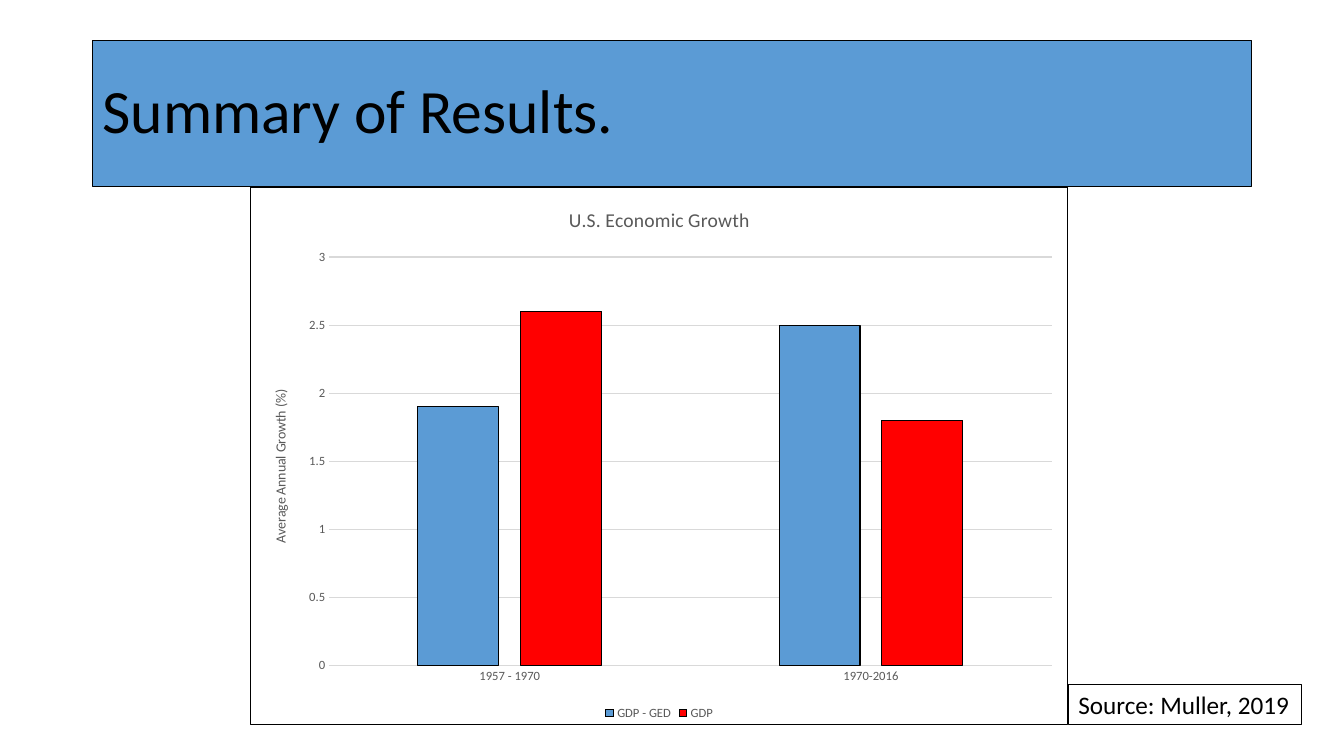
import pptx
import pptx.chart.data
import pptx.dml.color
import pptx.enum.chart
import pptx.enum.text
import pptx.oxml
import pptx.util

COLORS = {"blue": "5B9BD5", "red": "FF0000", "black": "000000",
          "white": "FFFFFF", "gray": "595959", "grid": "D9D9D9"}
FONT = "Calibri"
COLUMNS, ROWS = 160, 90
CELL = pptx.util.Inches(1) / 12


def rgb(name):
    return pptx.dml.color.RGBColor.from_string(COLORS[name])


def style_font(font, size, color):
    font.name = FONT
    font.size = pptx.util.Pt(size)
    font.bold = False
    font.color.rgb = rgb(color)


def style_line(line, color="black"):
    line.color.rgb = rgb(color)
    line.width = pptx.util.Pt(0.75)


def write(frame, text, size, color="black", align=None, spacing=None):
    paragraph = frame.paragraphs[0]
    paragraph.alignment = align
    paragraph.line_spacing = spacing
    run = paragraph.add_run()
    run.text = text
    style_font(run.font, size, color)


class ResultsSlide:
    def __init__(self, deck):
        self.slide = deck.slides.add_slide(deck.slide_layouts[5])

    def cells(self, *lengths):
        return [round(length * CELL) for length in lengths]

    def title(self, text, box):
        heading = self.slide.shapes.title
        heading.left, heading.top, heading.width, heading.height = self.cells(*box)
        heading.fill.solid()
        heading.fill.fore_color.rgb = rgb("blue")
        style_line(heading.line)
        frame = heading.text_frame
        frame.auto_size = pptx.enum.text.MSO_AUTO_SIZE.NONE
        frame.vertical_anchor = pptx.enum.text.MSO_ANCHOR.MIDDLE
        write(frame, text, 44, align=pptx.enum.text.PP_ALIGN.LEFT, spacing=0.9)

    def caption(self, text, box):
        source = self.slide.shapes.add_textbox(*self.cells(*box))
        style_line(source.line)
        source.text_frame.word_wrap = False
        source.text_frame.auto_size = pptx.enum.text.MSO_AUTO_SIZE.SHAPE_TO_FIT_TEXT
        write(source.text_frame, text, 18)

    def column_chart(self, heading, value_heading, periods, series, box):
        """Series maps each name to its values and its colour."""
        growth_data = pptx.chart.data.CategoryChartData()
        growth_data.categories = periods
        for name, (values, _) in series.items():
            growth_data.add_series(name, values)
        chart = self.slide.shapes.add_chart(
            pptx.enum.chart.XL_CHART_TYPE.COLUMN_CLUSTERED,
            *self.cells(*box), growth_data).chart
        style_font(chart.font, 10, "black")
        self.frame_chart(chart)
        write(chart.chart_title.text_frame, heading, 14, "gray")
        chart.chart_title.include_in_layout = False

        chart.has_legend = True
        chart.legend.position = pptx.enum.chart.XL_LEGEND_POSITION.BOTTOM
        chart.legend.include_in_layout = False
        style_font(chart.legend.font, 9, "gray")

        for axis in (chart.category_axis, chart.value_axis):
            axis.major_tick_mark = pptx.enum.chart.XL_TICK_MARK.NONE
            style_font(axis.tick_labels.font, 9, "gray")
        style_line(chart.category_axis.format.line, "grid")
        growth = chart.value_axis
        growth.minimum_scale, growth.maximum_scale, growth.major_unit = 0, 3, 0.5
        growth.format.line.fill.background()
        style_line(growth.major_gridlines.format.line, "grid")
        write(growth.axis_title.text_frame, value_heading, 10, "gray")

        plot = chart.plots[0]
        plot.gap_width, plot.overlap = 219, -27
        plot.vary_by_categories = False
        for bars, (_, color) in zip(plot.series, series.values()):
            bars.format.fill.solid()
            bars.format.fill.fore_color.rgb = rgb(color)
            style_line(bars.format.line)

    def frame_chart(self, chart):
        """Give the chart area a white fill and a thin black border."""
        namespaces = " ".join(
            f'xmlns:{prefix}="http://schemas.openxmlformats.org/drawingml/2006/{part}"'
            for prefix, part in (("c", "chart"), ("a", "main")))
        fill, border = (f'<a:solidFill><a:srgbClr val="{COLORS[name]}"/></a:solidFill>'
                        for name in ("white", "black"))
        area = pptx.oxml.parse_xml(
            f'<c:spPr {namespaces}>{fill}<a:ln w="9525">{border}</a:ln></c:spPr>')
        chart.element.chart.addnext(area)


def main():
    deck = pptx.Presentation()
    deck.slide_width = round(COLUMNS * CELL)
    deck.slide_height = round(ROWS * CELL)
    results = ResultsSlide(deck)

    title_top, title_height = 4.8, 17.4
    chart_left, chart_top = 29.8, title_top + title_height
    chart_width, chart_height = 97.4, 64.1
    source_height = 4.85
    source_top = chart_top + chart_height - source_height

    results.title("Summary of Results.", (11, title_top, 138, title_height))
    results.caption("Source: Muller, 2019",
                    (chart_left + chart_width, source_top, 27.8, source_height))
    results.column_chart(
        "U.S. Economic Growth", "Average Annual Growth (%)",
        ["1957 - 1970", "1970-2016"],
        {"GDP - GED": ([1.9, 2.5], "blue"), "GDP": ([2.6, 1.8], "red")},
        (chart_left, chart_top, chart_width, chart_height))
    deck.save("out.pptx")


if __name__ == "__main__":
    main()
